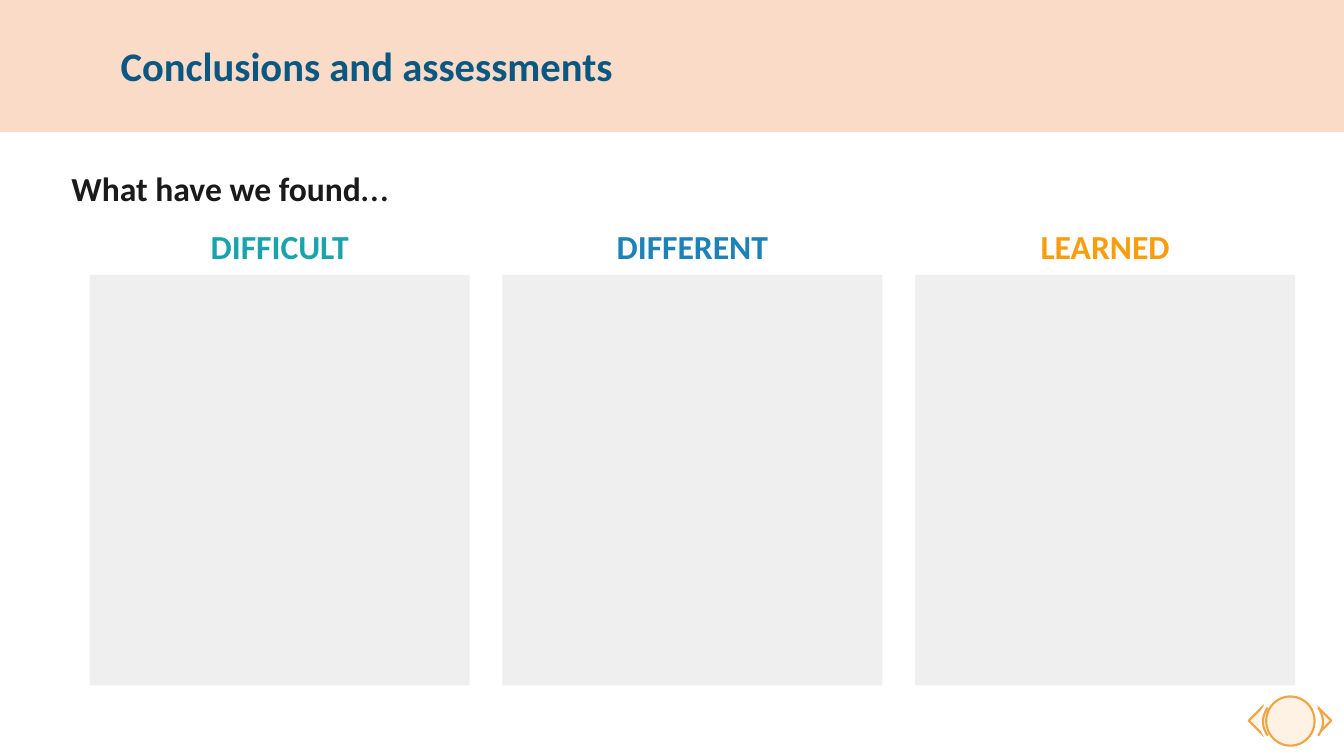
"""Build the "Conclusions and assessments" slide with three empty answer panels."""
from dataclasses import dataclass

from lxml import etree
from pptx import Presentation
from pptx.dml.color import RGBColor
from pptx.enum.shapes import MSO_SHAPE
from pptx.enum.text import MSO_ANCHOR, PP_ALIGN
from pptx.oxml.ns import qn
from pptx.util import Cm, Pt

RECT = MSO_SHAPE.RECTANGLE
OVAL = MSO_SHAPE.OVAL
ARROW = MSO_SHAPE.STRIPED_RIGHT_ARROW
LEFT, CENTER = PP_ALIGN.LEFT, PP_ALIGN.CENTER
TOP, MIDDLE = MSO_ANCHOR.TOP, MSO_ANCHOR.MIDDLE

FONT = "Calibri"
COLORS = {
    "white": "FFFFFF",
    "band": "ED7D31",
    "nav": "F4A344",
    "panel": "EFEFEF",
    "title": "0A5882",
    "ink": "1A1A1A",
    "teal": "1BA3AB",
    "blue": "1C82B8",
    "amber": "F79E0F",
}
SLIDE_W, SLIDE_H = 33.87, 19.05


@dataclass(frozen=True)
class Box:
    x: float
    y: float
    w: float
    h: float

    def lengths(self) -> tuple:
        return Cm(self.x), Cm(self.y), Cm(self.w), Cm(self.h)


@dataclass(frozen=True)
class Column:
    heading: str
    color: str


@dataclass(frozen=True)
class NavArrow:
    arrow_x: float
    mask_x: float
    arc_x: float
    direction: int


COLUMNS = [
    Column("DIFFICULT", "teal"),
    Column("DIFFERENT", "blue"),
    Column("LEARNED", "amber"),
]
PANEL = Box(2.26, 6.93, 9.58, 10.34)
COLUMN_STEP = 10.4
HEADING_H, HEADING_OVERHANG = 1.24, 0.25

NAV_ARROWS = [NavArrow(31.47, 31.75, 31.83, -1), NavArrow(32.74, 32.08, 33.22, 1)]
NAV_CIRCLE = Box(31.91, 17.55, 1.22, 1.24)
ARC_Y, ARC_H, ARC_DEPTH, ARC_STEPS = 17.83, 0.71, 0.12, 16


def rgb(name: str) -> RGBColor:
    return RGBColor.from_string(COLORS[name])


def set_line(s, color: str) -> None:
    s.line.color.rgb = rgb(color)
    s.line.width = Pt(1.5)


def add_shape(slide, kind, box: Box, fill: str, line: str = "", opacity: int = 100):
    s = slide.shapes.add_shape(kind, *box.lengths())
    s.shadow.inherit = False
    s.fill.solid()
    s.fill.fore_color.rgb = rgb(fill)
    if opacity < 100:
        clr = s._element.spPr.find(qn("a:solidFill"))[0]
        etree.SubElement(clr, qn("a:alpha")).set("val", str(opacity * 1000))
    if line:
        set_line(s, line)
    else:
        s.line.fill.background()
    return s


def add_text(slide, box: Box, parts: list[str], sizes: list[float], color: str,
             align=LEFT, anchor=TOP, spacing: float = 0.9) -> None:
    tf = slide.shapes.add_textbox(*box.lengths()).text_frame
    tf.word_wrap = True
    tf.vertical_anchor = anchor
    p = tf.paragraphs[0]
    p.alignment = align
    p.line_spacing = spacing
    for i, (part, size) in enumerate(zip(parts, sizes)):
        r = p.add_run()
        r.text = part
        r.font.name = FONT
        r.font.size = Pt(size)
        r.font.bold = i == 0
        r.font.color.rgb = rgb(color)


def add_arc(slide, x: float, direction: int) -> None:
    points = []
    for i in range(ARC_STEPS + 1):
        u = 2 * i / ARC_STEPS - 1
        bulge = ARC_DEPTH * (1 - u * u)
        offset = bulge if direction > 0 else ARC_DEPTH - bulge
        points.append((Cm(x + offset), Cm(ARC_Y + ARC_H * i / ARC_STEPS)))
    builder = slide.shapes.build_freeform(*points[0])
    builder.add_line_segments(points[1:], close=False)
    s = builder.convert_to_shape()
    s.shadow.inherit = False
    s.fill.background()
    set_line(s, "nav")


def add_navigation(slide) -> None:
    for nav in NAV_ARROWS:
        s = add_shape(slide, ARROW, Box(nav.arrow_x, 17.78, 0.81, 0.76), "nav", "nav", 14)
        if nav.direction < 0:
            s._element.spPr.find(qn("a:xfrm")).set("flipH", "1")
        mask = Box(nav.mask_x, NAV_CIRCLE.y, NAV_CIRCLE.w, NAV_CIRCLE.h)
        add_shape(slide, OVAL, mask, "white", "white")
        add_arc(slide, nav.arc_x, nav.direction)
    add_shape(slide, OVAL, NAV_CIRCLE, "nav", "nav", 14)


def add_column(slide, index: int, column: Column) -> None:
    x = PANEL.x + index * COLUMN_STEP
    heading = Box(x - HEADING_OVERHANG, PANEL.y - HEADING_H,
                  PANEL.w + 2 * HEADING_OVERHANG, HEADING_H)
    add_text(slide, heading, [column.heading], [24], column.color, CENTER)
    add_shape(slide, RECT, Box(x, PANEL.y, PANEL.w, PANEL.h), "panel")


def main() -> None:
    prs = Presentation()
    prs.slide_width, prs.slide_height = Cm(SLIDE_W), Cm(SLIDE_H)
    slide = prs.slides.add_slide(prs.slide_layouts[6])
    add_navigation(slide)
    add_shape(slide, RECT, Box(0, 0, SLIDE_W, 3.33), "band", opacity=27)
    add_text(slide, Box(1.55, 4.09, 13.92, 1.63), ["What have we found", "…"], [24, 28], "ink")
    for index, column in enumerate(COLUMNS):
        add_column(slide, index, column)
    add_text(slide, Box(2.79, 0.28, 25.43, 2.72), ["Conclusions and assessments"], [29],
             "title", anchor=MIDDLE, spacing=1.0)
    prs.save("out.pptx")


if __name__ == "__main__":
    main()
